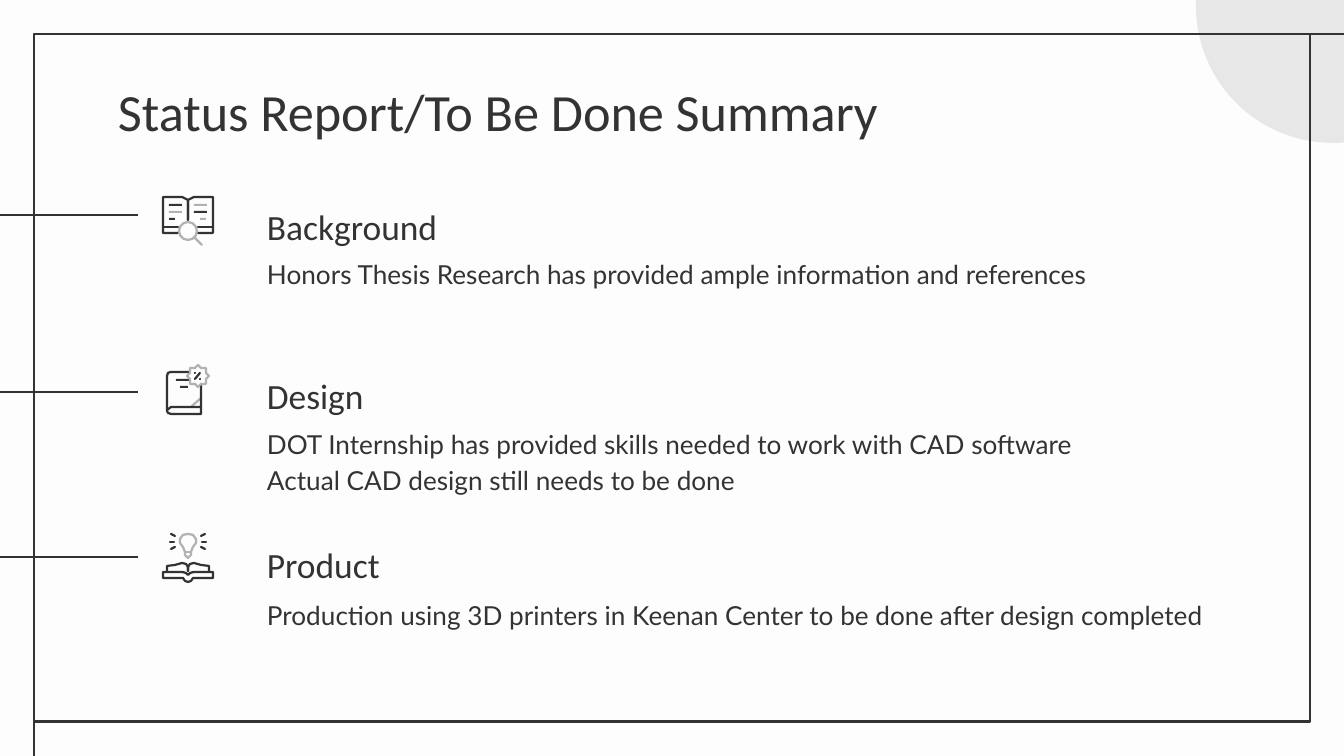
from dataclasses import dataclass
from math import cos, pi, sin

from pptx import Presentation
from pptx.dml.color import RGBColor
from pptx.enum import shapes, text
from pptx.oxml import ns, xmlchemy
from pptx.util import Pt

PX = 914400 / 134.4


@dataclass(frozen=True)
class Theme:
    back: str = "FDFDFD"
    ink: str = "333333"
    pale: str = "B2B2B2"
    disc: str = "E8E7E7"
    head: str = "Calibri"
    body: str = "Lato"
    title: int = 28
    sub: int = 19
    copy: int = 14
    rule: float = 1.5
    thin: float = 1.2


T = Theme()
ROWS = [
    (183, 241, 215, "Background",
     ["Honors Thesis Research has provided ample information and references"]),
    (352, 411, 392, "Design",
     ["DOT Internship has provided skills needed to work with CAD software",
      "Actual CAD design still needs to be done"]),
    (521, 582, 557, "Product",
     ["Production using 3D printers in Keenan Center to be done after design completed"]),
]


def emu(*vals):
    return [round(v * PX) for v in vals]


def tint(fmt, color):
    if color:
        fmt.solid()
        fmt.fore_color.rgb = RGBColor.from_string(color)
    else:
        fmt.background()


def style(item, fill=None, line=None, width=T.thin):
    item.shadow.inherit = False
    tint(item.fill, fill)
    tint(item.line.fill, line)
    if line:
        item.line.width = Pt(width)


def shape(slide, kind, box, **look):
    item = slide.shapes.add_shape(kind, *emu(*box))
    style(item, **look)


def rule(slide, x1, y1, x2, y2):
    item = slide.shapes.add_connector(
        shapes.MSO_CONNECTOR.STRAIGHT, *emu(x1, y1, x2, y2))
    tint(item.line.fill, T.ink)
    item.line.width = Pt(T.rule)
    item._element.spPr.append(xmlchemy.OxmlElement("a:effectLst"))


def path(slide, pts, color=T.ink, close=False):
    pen = slide.shapes.build_freeform(*pts[0], scale=PX)
    pen.add_line_segments(pts[1:], close=close)
    item = pen.convert_to_shape()
    style(item, line=color)
    item._element.spPr.find(ns.qn("a:ln")).set("cap", "rnd")


def dash(slide, x, y, w, color=T.ink):
    shape(slide, shapes.MSO_SHAPE.ROUNDED_RECTANGLE, (x, y - 1, w, 2), fill=color)


def ring(slide, x, y, r, **look):
    shape(slide, shapes.MSO_SHAPE.OVAL, (x - r, y - r, 2 * r, 2 * r), **look)


def flip(pts, mid=188):
    return [(2 * mid - x, y) for x, y in pts]


def both(slide, pts):
    path(slide, pts)
    path(slide, flip(pts))


def write(slide, box, lines, size, font=T.head, gap=None, low=False):
    frame = slide.shapes.add_textbox(*emu(*box)).text_frame
    frame.word_wrap = True
    frame.vertical_anchor = text.MSO_ANCHOR.BOTTOM if low else text.MSO_ANCHOR.TOP
    frame.margin_left = frame.margin_right = emu(13)[0]
    frame.margin_top = frame.margin_bottom = emu(13)[0]
    for i, line in enumerate(lines):
        para = frame.add_paragraph() if i else frame.paragraphs[0]
        para.line_spacing = gap
        run = para.add_run()
        run.text = line
        run.font.name, run.font.size = font, Pt(size)
        run.font.color.rgb = RGBColor.from_string(T.ink)


def study(slide):
    both(slide, [(178, 233), (163, 233), (163, 197), (182, 197), (188, 200), (188, 220)])
    both(slide, [(163, 227), (178, 227)])
    for y, left, right in ((205, T.ink, T.pale), (212, T.pale, T.ink)):
        dash(slide, 169, y, 13, left)
        dash(slide, 194, y, 13, right)
    dash(slide, 169, 219, 6)
    dash(slide, 200, 219, 6, T.pale)
    ring(slide, 188, 231, 9, line=T.pale)
    path(slide, [(195, 238), (202, 245)], T.pale)


def manual(slide):
    path(slide, [(192, 406), (201, 398)], T.pale)
    path(slide, [(189, 372), (171, 372), (168, 373), (167, 376), (167, 411),
                 (168, 413), (171, 414), (201, 414), (201, 385)])
    path(slide, [(201, 407), (171, 407), (167, 410)])
    dash(slide, 176, 380, 14)
    dash(slide, 180, 387, 8)
    wave = [(198 + (10 + cos(8 * a)) * cos(a), 376 + (10 + cos(8 * a)) * sin(a))
            for a in (2 * pi * i / 48 for i in range(48))]
    path(slide, wave, T.pale, close=True)
    path(slide, [(195, 379), (200, 373)])
    ring(slide, 195, 373, 1, fill=T.ink)
    ring(slide, 200, 379, 1, fill=T.ink)


def idea(slide):
    both(slide, [(188, 571), (188, 567), (186, 564), (182, 563), (175, 565),
                 (167, 566), (167, 571)])
    half = [(188, 575), (186, 573), (182, 572), (163, 572), (163, 578),
            (183, 578), (185, 581), (188, 582)]
    path(slide, half + flip(half)[::-1], close=True)
    for ray in ([(170, 542), (174, 542)], [(171, 534), (175, 536)],
                [(171, 549), (175, 547)]):
        both(slide, ray)
    bulb = [(188, 534), (183, 535), (180, 539), (180, 543), (183, 547),
            (185, 552), (185, 555), (188, 558)]
    path(slide, bulb + flip(bulb)[::-1], T.pale, close=True)
    path(slide, [(185, 552), (191, 552)], T.pale)


def main():
    deck = Presentation()
    deck.slide_width, deck.slide_height = emu(1344, 756)
    slide = deck.slides.add_slide(deck.slide_layouts[6])
    tint(slide.background.fill, T.back)
    ring(slide, 1333, 6, 137, fill=T.disc)
    for row in ROWS:
        rule(slide, 0, row[2], 138, row[2])
    shape(slide, shapes.MSO_SHAPE.RECTANGLE, (34, 34, 1276, 688),
          line=T.ink, width=T.rule)
    rule(slide, 1344, 34, 1310, 34)
    rule(slide, 34, 722, 34, 756)
    write(slide, (105, 66, 1133, 85), ["Status Report/To Be Done Summary"], T.title)
    for top, base, _, name, lines in ROWS:
        write(slide, (254, base, 984, 78), lines, T.copy, font=T.body, gap=1.15)
        write(slide, (254, top, 972, 78), [name], T.sub, gap=1.15, low=True)
    for icon in (idea, manual, study):
        icon(slide)
    deck.save("out.pptx")


if __name__ == "__main__":
    main()
